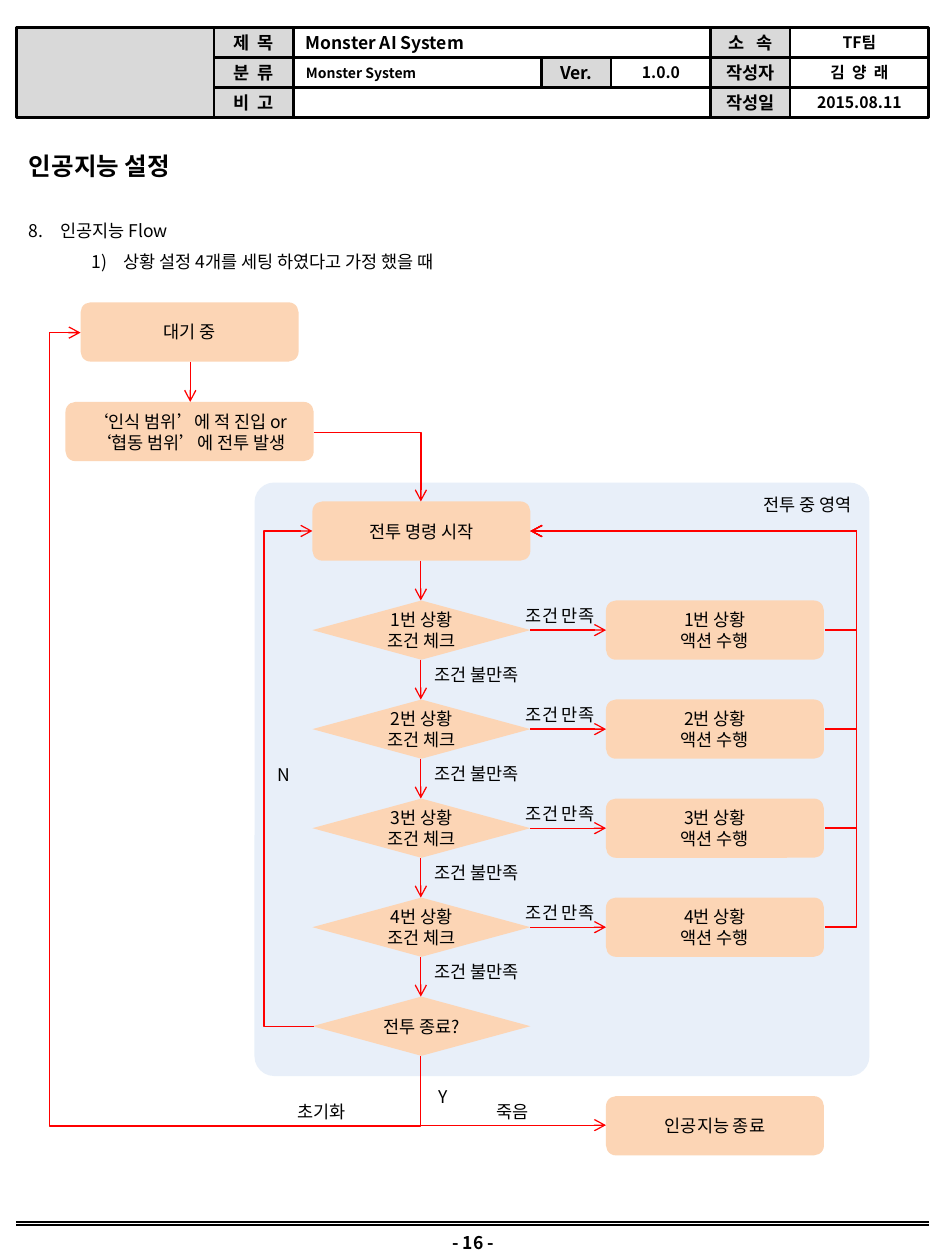
from dataclasses import dataclass
from lxml.etree import SubElement
from pptx import Presentation
from pptx.dml.color import RGBColor
from pptx.enum.shapes import MSO_CONNECTOR, MSO_SHAPE
from pptx.enum.text import MSO_ANCHOR, MSO_AUTO_SIZE, PP_ALIGN
from pptx.oxml.ns import qn
from pptx.util import Inches, Pt


@dataclass(frozen=True)
class Theme:
    font: str = "Noto Sans CJK KR"
    ink: str = "000000"
    gray: str = "D9D9D9"
    peach: str = "FCD5B5"
    blue: str = "C6D9F1"
    red: str = "FF0000"
    head: int = 14
    base: int = 10
    small: int = 9
    tiny: int = 8


T = Theme()
BOX, OVAL, GEM = MSO_SHAPE.RECTANGLE, MSO_SHAPE.ROUNDED_RECTANGLE, MSO_SHAPE.DIAMOND
LEFT, MID, RIGHT = PP_ALIGN.LEFT, PP_ALIGN.CENTER, PP_ALIGN.RIGHT

# Flow grid: row pitch, node size and column edges
PITCH, WIDE, TALL = 0.786, 1.73, 0.47
COL, SIDE = 2.48, 4.81
AXIS, END = 3.34, 4.21


def row(num):
    """Top of a flow row, counted from the idle state."""
    return 2.4 + PITCH * num


def write(shape, text, size=T.base, bold=False, align=MID,
          anchor=MSO_ANCHOR.MIDDLE, space=None, pad=0.1):
    frame = shape.text_frame
    frame.word_wrap = True
    frame.auto_size = MSO_AUTO_SIZE.NONE
    frame.vertical_anchor = anchor
    frame.margin_left = frame.margin_right = Inches(pad)
    frame.margin_top = frame.margin_bottom = Inches(0.05)
    frame.text = text
    for para in frame.paragraphs:
        para.alignment = align
        para.space_before = Pt(0)
        if space:
            para.line_spacing = space
        for run in para.runs:
            font = run.font
            font.size, font.bold, font.name = Pt(size), bold, T.font
            font.color.rgb = RGBColor.from_string(T.ink)
            SubElement(run._r.get_or_add_rPr(), qn("a:ea"), typeface=T.font)


def place(shape, x, y, w, h):
    shape.left, shape.top = Inches(x), Inches(y)
    shape.width, shape.height = Inches(w), Inches(h)


def block(slide, kind, x, y, w, h, text="", fill=None, edge=None, **form):
    shape = slide.shapes.add_shape(kind, Inches(x), Inches(y), Inches(w), Inches(h))
    shape.shadow.inherit = False
    if fill:
        shape.fill.solid()
        shape.fill.fore_color.rgb = RGBColor.from_string(fill)
    else:
        shape.fill.background()
    if edge:
        shape.line.color.rgb = RGBColor.from_string(T.ink)
        shape.line.width = Pt(edge)
    else:
        shape.line.fill.background()
    if text:
        write(shape, text, **form)
    return shape


def node(slide, x, y, text, kind=OVAL, w=WIDE):
    block(slide, kind, x, y, w, TALL, text, T.peach, pad=0)


def label(slide, x, y, text, w=0.87):
    block(slide, OVAL, x, y, w, 0.24, text, pad=0)


def link(slide, start, stop, kind=None, turn=0, bends=(), color=T.red, width=0.75, tip=True):
    """Straight line, or an elbow when a connector preset is given."""
    style = MSO_CONNECTOR.ELBOW if kind else MSO_CONNECTOR.STRAIGHT
    line = slide.shapes.add_connector(style, *map(Inches, (*start, *stop)))
    line.line.color.rgb = RGBColor.from_string(color)
    line.line.width = Pt(width)
    prop = line._element.spPr
    if kind:
        geom = prop.find(qn("a:prstGeom"))
        geom.set("prst", kind)
        guides = geom.find(qn("a:avLst"))
        if guides is None:
            guides = SubElement(geom, qn("a:avLst"))
        for num, bend in enumerate(bends, 1):
            name = f"adj{num}" if len(bends) > 1 or kind == "bentConnector3" else "adj"
            SubElement(guides, qn("a:gd"), name=name, fmla=f"val {round(bend * 100000)}")
    if turn:
        prop.find(qn("a:xfrm")).set("rot", str(turn * 60000))
    if tip:
        SubElement(line.line._get_or_add_ln(), qn("a:tailEnd"), type="arrow")
    SubElement(prop, qn("a:effectLst"))


def loop(slide, start, stop, lane):
    """Elbow that runs out to a vertical lane and back."""
    bend = (start[0] - lane) / (start[0] - stop[0])
    link(slide, start, stop, "bentConnector3", bends=[bend])


def header(slide):
    step = 0.237
    block(slide, BOX, 0.13, 0.22, 1.57, 3 * step, fill=T.gray, edge=1.5)
    # Values: column, row, width, text, size, alignment
    cells = [
        (6.27, 0, 1.1, "TF팀", T.small, MID),
        (6.27, 1, 1.1, "김  양  래", T.small, MID),
        (6.27, 2, 1.1, "2015.08.11", T.small, MID),
        (2.33, 0, 3.31, "Monster AI System", T.base, LEFT),
        (2.33, 1, 1.97, "Monster System", T.tiny, LEFT),
        (2.33, 2, 3.31, "", T.base, LEFT),
        (4.85, 1, 0.79, "1.0.0", T.small, MID),
    ]
    for x, num, w, text, size, align in cells:
        block(slide, BOX, x, 0.22 + step * num, w, step, text, edge=1.5,
              size=size, bold=True, align=align, pad=0.1 if align == LEFT else 0)
    # Gray captions
    names = [(1.7, 0, 0.63, "제  목"), (1.7, 1, 0.63, "분  류"), (1.7, 2, 0.63, "비  고"),
             (5.64, 0, 0.63, "소   속"), (5.64, 1, 0.63, "작성자"), (5.64, 2, 0.63, "작성일"),
             (4.3, 1, 0.55, "Ver.")]
    for x, num, w, text in names:
        block(slide, BOX, x, 0.22 + step * num, w, step, text, T.gray, 1.5, bold=True, pad=0)


def footer(slide):
    for y in (9.7, 9.72):
        link(slide, (0.13, y), (7.37, y), color=T.ink, width=1, tip=False)
    page = slide.shapes.add_textbox(Inches(3.36), Inches(9.72), Inches(0.79), Inches(0.28))
    write(page, "- 16 -", bold=True)


def heading(slide):
    title, body = slide.shapes.title, slide.placeholders[1]
    place(title, 0.13, 1.06, 7.24, 0.39)
    write(title, "인공지능 설정", size=T.head, bold=True, align=LEFT, space=1.5)
    place(body, 0.13, 1.61, 7.24, 7.95)
    write(body, "인공지능 Flow\n상황 설정 4개를 세팅 하였다고 가정 했을 때",
          align=LEFT, anchor=MSO_ANCHOR.TOP, space=1.5)
    marks = [(0.25, {"type": "arabicPeriod", "startAt": "8"}), (0.75, {"type": "arabicParenR"})]
    for level, (para, (left, mark)) in enumerate(zip(body.text_frame.paragraphs, marks)):
        para.level = level
        prop = para._p.get_or_add_pPr()
        prop.set("marL", str(Inches(left)))
        prop.set("indent", str(Inches(-0.25)))
        SubElement(prop, qn("a:buFont"), typeface="+mj-lt")
        SubElement(prop, qn("a:buAutoNum"), **mark)


def zone(slide):
    area = block(slide, OVAL, 2.02, 3.83, 4.88, 4.71, "전투 중 영역", T.blue,
                 align=RIGHT, anchor=MSO_ANCHOR.TOP)
    area.adjustments[0] = 0.033
    tint = area._element.spPr.find(qn("a:solidFill"))[0]
    SubElement(tint, qn("a:alpha"), val="40000")


def flow(slide):
    half = TALL / 2
    start = (END, row(2.3) + 0.0)
    start = (END, 3.98 + half)
    top = 3.98

    # Entry into battle
    node(slide, 0.64, 2.4, "대기 중")
    node(slide, 0.52, 3.19, "‘인식 범위’에 적 진입 or\n‘협동 범위’에 전투 발생", w=1.97)
    node(slide, COL, top, "전투 명령 시작")
    link(slide, (1.51, 2.87), (1.51, 3.19))
    link(slide, (2.49, 3.43), (AXIS, top), "bentConnector2")

    # Four checks, each with its action
    for num in range(1, 5):
        y = top + PITCH * num
        mid = y + half
        node(slide, COL, y, f"{num}번 상황\n조건 체크", GEM)
        node(slide, SIDE, y, f"{num}번 상황\n액션 수행")
        link(slide, (AXIS, y - PITCH + TALL), (AXIS, y))
        link(slide, (END, mid), (SIDE, mid))
        loop(slide, (6.55, mid), start, 6.8)
        label(slide, 4.01, y, "조건 만족")
        label(slide, 3.28, y + TALL, "조건 불만족", 1.01)

    # End of battle and the way back
    last = top + 5 * PITCH
    node(slide, COL, last, "전투 종료?", GEM)
    link(slide, (AXIS, last - PITCH + TALL), (AXIS, last))
    loop(slide, (2.49, last + half), (COL, start[1]), 2.09)
    label(slide, 2.1, 6.03, "N", 0.31)
    label(slide, 3.36, 8.58, "Y", 0.31)

    # Shutdown and reset
    node(slide, SIDE, 8.7, "인공지능 종료")
    link(slide, (4.35, 7.92), (3.8, 9.39), "bentConnector2", 270)
    link(slide, (4.86, 4.16), (-0.88, 6.86), "bentConnector4", 90, (-0.097, 1.092))
    label(slide, 3.63, 8.7, "죽음")
    label(slide, 2.12, 8.7, "초기화")


def main():
    deck = Presentation()
    deck.slide_width, deck.slide_height = Inches(7.5), Inches(10)
    slide = deck.slides.add_slide(deck.slide_layouts[1])
    header(slide)
    footer(slide)
    heading(slide)
    zone(slide)
    flow(slide)
    deck.save("out.pptx")


if __name__ == "__main__":
    main()
